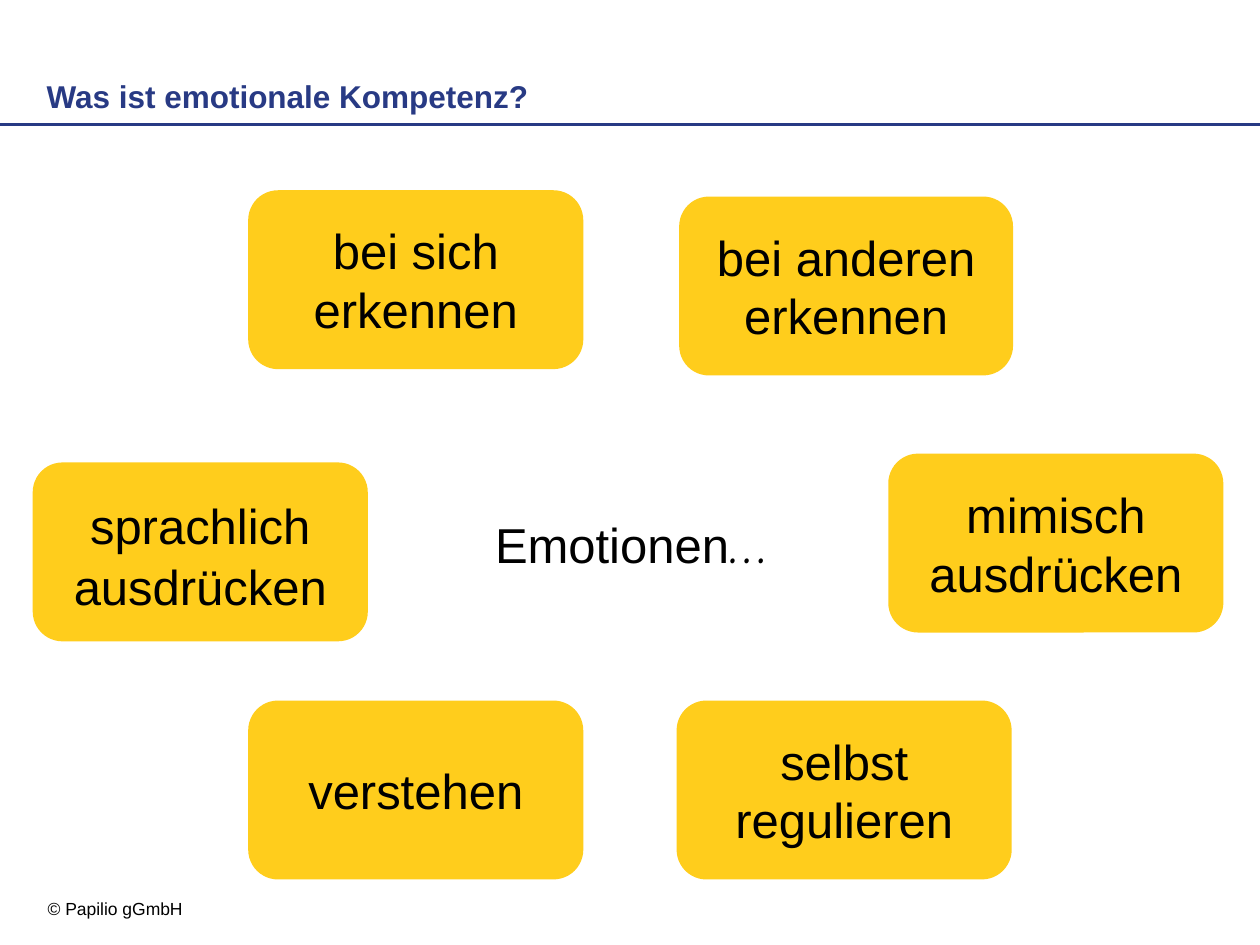
import pptx
import pptx.util
import pptx.dml.color
import pptx.enum.shapes
import pptx.enum.text
import pptx.oxml.ns
from lxml import etree

Inches = pptx.util.Inches
Align = pptx.enum.text.PP_ALIGN
Anchor = pptx.enum.text.MSO_ANCHOR
COLORS = {"navy": "283A84", "gold": "FFCD1C", "black": "000000"}
MAIN = ("Arial", 28)
COMIC = ("Comic Neue", 32)


def color(name):
    return pptx.dml.color.RGBColor.from_string(COLORS[name])


def place(shape, left, top, width, height):
    shape.left, shape.top = Inches(left), Inches(top)
    shape.width, shape.height = Inches(width), Inches(height)


def write(shape, runs, align=Align.LEFT, anchor=Anchor.TOP, tone="black", bold=False):
    frame = shape.text_frame
    frame.word_wrap = True
    frame.auto_size = pptx.enum.text.MSO_AUTO_SIZE.NONE
    frame.vertical_anchor = anchor
    para = frame.paragraphs[0]
    para.alignment = align
    for text, (face, size) in runs:
        run = para.add_run()
        run.text = text
        run.font.name = face
        run.font.size = pptx.util.Pt(size)
        run.font.bold = bold
        run.font.color.rgb = color(tone)


def add_title(slide, text):
    title = slide.shapes.title
    place(title, 0.27, 0.56, 7.64, 0.39)
    write(title, [(text, ("Arial", 18))], tone="navy", bold=True)


def add_rule(slide, top):
    kind = pptx.enum.shapes.MSO_CONNECTOR.STRAIGHT
    rule = slide.shapes.add_connector(kind, 0, Inches(top), Inches(10), Inches(top))
    rule.line.color.rgb = color("navy")
    rule.line.width = pptx.util.Pt(1.5)
    etree.SubElement(rule._element.spPr, pptx.oxml.ns.qn("a:effectLst"))


def add_label(slide, left, top, width, height, runs, align=Align.LEFT):
    label = slide.shapes.add_textbox(
        Inches(left), Inches(top), Inches(width), Inches(height))
    write(label, runs, align)


def add_card(slide, left, top, width, runs):
    kind = pptx.enum.shapes.MSO_SHAPE.ROUNDED_RECTANGLE
    card = slide.shapes.add_shape(
        kind, Inches(left), Inches(top), Inches(width), Inches(1.42))
    card.shadow.inherit = False
    card.fill.solid()
    card.fill.fore_color.rgb = color("gold")
    card.line.fill.background()
    write(card, runs, Align.CENTER, Anchor.MIDDLE)


def main():
    deck = pptx.Presentation()
    deck.slide_width, deck.slide_height = Inches(10), Inches(7.5)
    slide = deck.slides.add_slide(deck.slide_layouts[5])
    add_rule(slide, 0.99)
    add_label(slide, 0.28, 7.08, 2.17, 0.27, [("© Papilio gGmbH", ("Arial", 10))])
    add_title(slide, "Was ist emotionale Kompetenz?")
    add_label(slide, 3.35, 3.98, 3.31, 0.64,
              [("Emotionen", MAIN), ("…", COMIC)], Align.CENTER)
    cards = [
        (1.97, 1.51, 2.66, [("bei sich erkennen", MAIN)]),
        (5.39, 1.56, 2.65, [("bei anderen erkennen", MAIN)]),
        (0.26, 3.67, 2.66, [("sprachlich", MAIN), (" ", COMIC), ("ausdrücken", MAIN)]),
        (7.05, 3.6, 2.66, [("mimisch ausdrücken", MAIN)]),
        (5.37, 5.56, 2.66, [("selbst regulieren", MAIN)]),
        (1.97, 5.56, 2.66, [("verstehen", MAIN)]),
    ]
    for left, top, width, runs in cards:
        add_card(slide, left, top, width, runs)
    deck.save("out.pptx")


if __name__ == "__main__":
    main()
